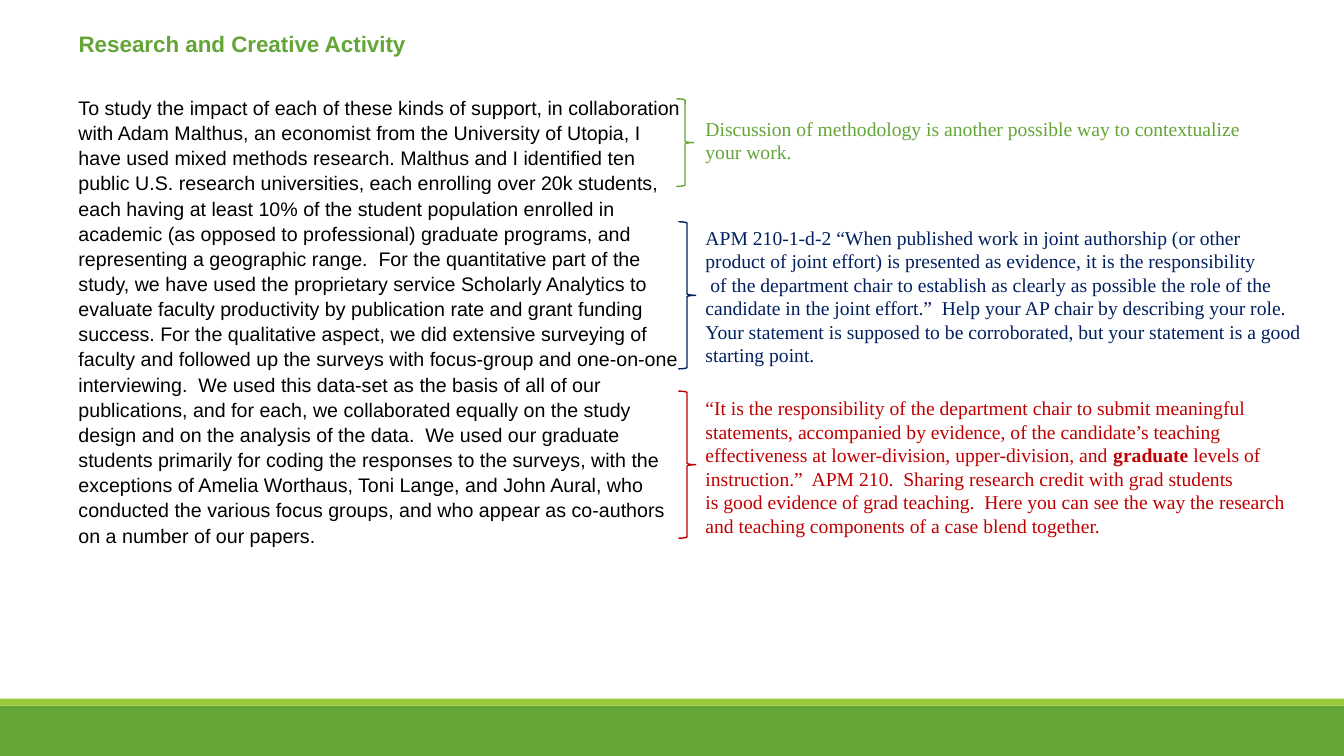
from dataclasses import dataclass

from pptx import Presentation
from pptx.dml.color import RGBColor
from pptx.enum.shapes import MSO_SHAPE
from pptx.enum.text import MSO_ANCHOR, MSO_AUTO_SIZE, PP_ALIGN
from pptx.shapes.autoshape import Shape
from pptx.slide import Slide
from pptx.text.text import TextFrame
from pptx.util import Inches, Pt

WIDTH, HEIGHT = Inches(13.33), Inches(7.5)


@dataclass(frozen=True)
class Theme:
    green: str = "63A537"
    lime: str = "99CB38"
    navy: str = "002060"
    red: str = "C00000"
    black: str = "000000"
    sans: str = "Arial"
    serif: str = "Times New Roman"
    title_size: int = 16
    text_size: int = 14
    leading: float = 1.07


@dataclass(frozen=True)
class Box:
    """Left, top, width and height in percent of the slide."""
    x: float
    y: float
    w: float
    h: float

    def emu(self) -> tuple[int, int, int, int]:
        return (int(WIDTH * self.x / 100), int(HEIGHT * self.y / 100),
                int(WIDTH * self.w / 100), int(HEIGHT * self.h / 100))


@dataclass(frozen=True)
class Band:
    box: Box
    color: str


@dataclass(frozen=True)
class Note:
    color: str
    brace: Box
    box: Box
    lines: tuple[str, ...]
    strong: str = ""


THEME = Theme()
NOTE_X, NOTE_W = 51.75, 46.5
BRACE_X, BRACE_W = 50.48, 1.28

BANDS = (
    Band(Box(0, 93.33, 100, 6.67), THEME.green),
    Band(Box(0, 92.4, 100, 0.93), THEME.lime),
)

TITLE = "Research and Creative Activity"
TITLE_BOX = Box(5.1, 3.07, 46.65, 5.5)
BODY_BOX = Box(5.1, 11.8, 46.65, 64)
# Passages of the statement, set two spaces apart
PASSAGES = (
    "To study the impact of each of these kinds of support, in collaboration "
    "with Adam Malthus, an economist from the University of Utopia, I have used "
    "mixed methods research. Malthus and I identified ten public U.S. research "
    "universities, each enrolling over 20k students, each having at least 10% of "
    "the student population enrolled in academic (as opposed to professional) "
    "graduate programs, and representing a geographic range.",
    "For the quantitative part of the study, we have used the proprietary service "
    "Scholarly Analytics to evaluate faculty productivity by publication rate and "
    "grant funding success. For the qualitative aspect, we did extensive surveying "
    "of faculty and followed up the surveys with focus-group and one-on-one "
    "interviewing.",
    "We used this data-set as the basis of all of our publications, and for each, "
    "we collaborated equally on the study design and on the analysis of the data.",
    "We used our graduate students primarily for coding the responses to the "
    "surveys, with the exceptions of Amelia Worthaus, Toni Lange, and John Aural, "
    "who conducted the various focus groups, and who appear as co-authors on a "
    "number of our papers.",
)

NOTES = (
    Note(THEME.green, Box(50.33, 13.07, BRACE_W, 11.6),
         Box(NOTE_X, 14.8, NOTE_W, 7.6), (
        "Discussion of methodology is another possible way to contextualize",
        "your work.",
    )),
    Note(THEME.navy, Box(BRACE_X, 29.33, BRACE_W, 19.47),
         Box(NOTE_X, 29.2, NOTE_W, 20.13), (
        "APM 210-1-d-2 “When published work in joint authorship (or other",
        "product of joint effort) is presented as evidence, it is the responsibility",
        " of the department chair to establish as clearly as possible the role of the "
        "candidate in the joint effort.”  Help your AP chair by describing your role. "
        "Your statement is supposed to be corroborated, but your statement is a good "
        "starting point.",
    )),
    Note(THEME.red, Box(BRACE_X, 51.73, BRACE_W, 19.47),
         Box(NOTE_X, 51.73, NOTE_W, 24.27), (
        "“It is the responsibility of the department chair to submit meaningful",
        "statements, accompanied by evidence, of the candidate’s teaching",
        "effectiveness at lower-division, upper-division, and graduate levels of",
        "instruction.”  APM 210.  Sharing research credit with grad students",
        "is good evidence of grad teaching.  Here you can see the way the research "
        "and teaching components of a case blend together.",
    ), strong="graduate"),
)


def write(tf: TextFrame, lines: tuple[str, ...], color: str, font: dict,
          paragraph: dict, strong: str = "") -> None:
    frame = dict(word_wrap=True, auto_size=MSO_AUTO_SIZE.NONE,
                 vertical_anchor=MSO_ANCHOR.TOP)
    for name, value in frame.items():
        setattr(tf, name, value)
    for i, line in enumerate(lines):
        p = tf.paragraphs[0] if i == 0 else tf.add_paragraph()
        for name, value in paragraph.items():
            setattr(p, name, value)
        parts = line.partition(strong) if strong else (line,)
        for text in filter(None, parts):
            r = p.add_run()
            r.text = text
            for name, value in font.items():
                setattr(r.font, name, value)
            r.font.color.rgb = RGBColor.from_string(color)
            if text == strong:
                r.font.bold = True


def add_plain_shape(s: Slide, kind: MSO_SHAPE, box: Box) -> Shape:
    sp = s.shapes.add_shape(kind, *box.emu())
    sp.shadow.inherit = False
    return sp


def add_band(s: Slide, band: Band) -> None:
    sp = add_plain_shape(s, MSO_SHAPE.RECTANGLE, band.box)
    sp.fill.solid()
    sp.fill.fore_color.rgb = RGBColor.from_string(band.color)
    sp.line.fill.background()


def add_note(s: Slide, note: Note) -> None:
    tf = s.shapes.add_textbox(*note.box.emu()).text_frame
    write(tf, note.lines, note.color,
          dict(name=THEME.serif, size=Pt(THEME.text_size)), {}, note.strong)
    sp = add_plain_shape(s, MSO_SHAPE.RIGHT_BRACE, note.brace)
    sp.fill.background()
    sp.line.color.rgb = RGBColor.from_string(note.color)
    sp.line.width = Pt(1)


def main() -> None:
    prs = Presentation()
    prs.slide_width, prs.slide_height = WIDTH, HEIGHT
    s = prs.slides.add_slide(prs.slide_layouts[5])

    # Footer bands
    for band in BANDS:
        add_band(s, band)

    # Title and statement
    spacing = dict(alignment=PP_ALIGN.LEFT, line_spacing=THEME.leading)
    title = s.shapes.title
    title.left, title.top, title.width, title.height = TITLE_BOX.emu()
    write(title.text_frame, (TITLE,), THEME.green,
          dict(name=THEME.sans, size=Pt(THEME.title_size), bold=True), spacing)
    body = s.shapes.add_textbox(*BODY_BOX.emu())
    write(body.text_frame, ("  ".join(PASSAGES),), THEME.black,
          dict(name=THEME.sans, size=Pt(THEME.text_size)), spacing)

    # Margin notes with their braces
    for note in NOTES:
        add_note(s, note)

    prs.save("out.pptx")


if __name__ == "__main__":
    main()
